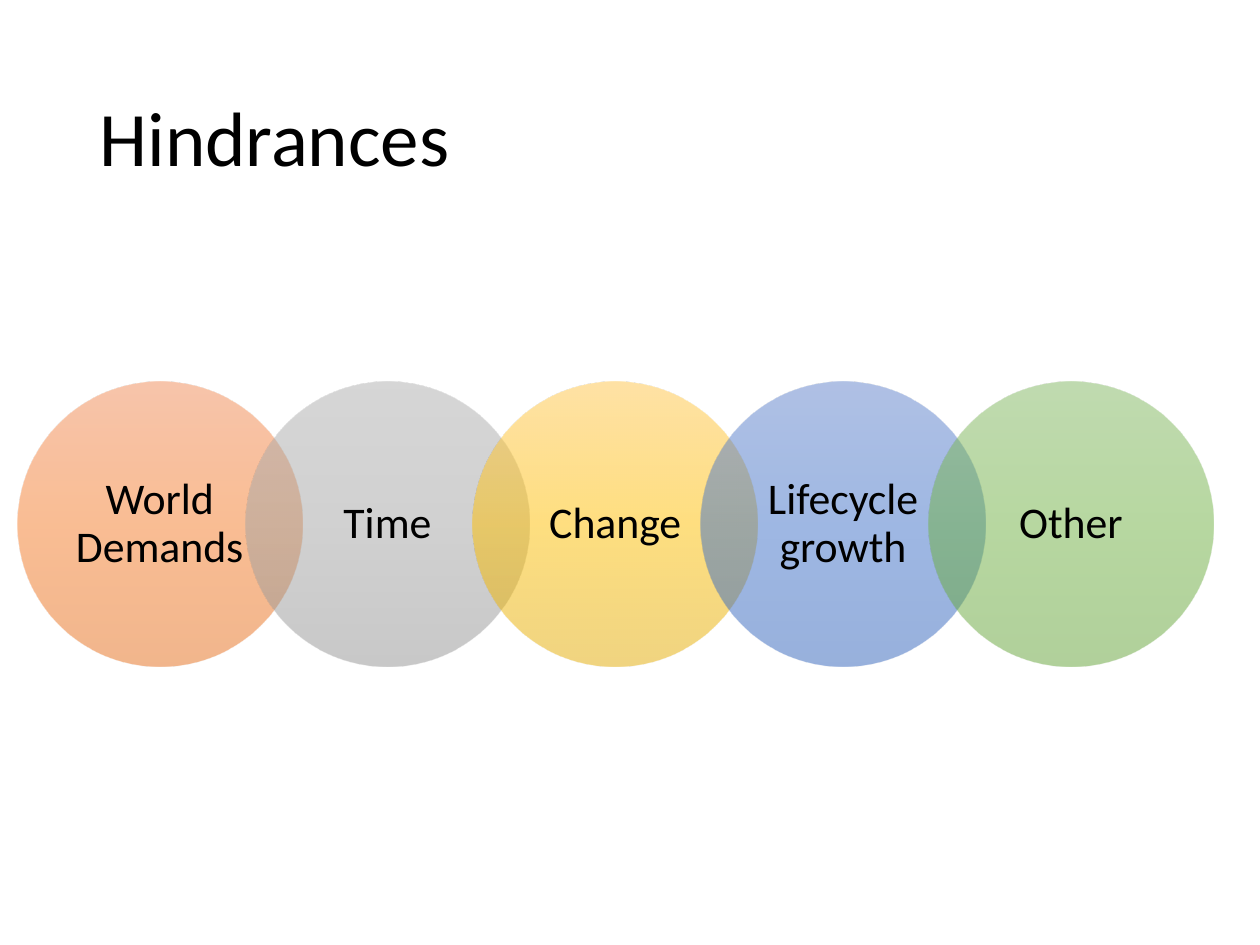
import dataclasses

import lxml.etree
import pptx
import pptx.dml.color
import pptx.enum.shapes
import pptx.enum.text
import pptx.oxml.ns
import pptx.util

Cm = pptx.util.Cm


@dataclasses.dataclass(frozen=True)
class Theme:
    font: str = "Calibri"
    text: str = "000000"
    title_size: int = 44
    label_size: int = 25
    line_spacing: float = 0.9
    opacity: int = 50
    orange: tuple = ("F18C57", "F67B28", "E56C19")
    grey: tuple = ("AFAFAF", "A5A5A5", "939393")
    gold: tuple = ("FFC64B", "FFC000", "E3AB00")
    blue: tuple = ("6183CB", "3E70CA", "3062BB")
    green: tuple = ("81B861", "6FB242", "62A336")


class SlideBuilder:
    """Draws styled elements on the current slide."""

    def __init__(self, page, theme):
        self.page = page
        self.theme = theme

    def set_text(self, shape, text, size, align):
        frame = shape.text_frame
        frame.text = text
        frame.word_wrap = True
        frame.auto_size = pptx.enum.text.MSO_AUTO_SIZE.NONE
        frame.vertical_anchor = pptx.enum.text.MSO_ANCHOR.MIDDLE
        for para in frame.paragraphs:
            para.alignment = align
            para.line_spacing = self.theme.line_spacing
            for span in para.runs:
                span.font.name = self.theme.font
                span.font.size = pptx.util.Pt(size)
                span.font.color.rgb = pptx.dml.color.RGBColor.from_string(self.theme.text)

    def title(self, text, left, top, width, height):
        title = self.page.shapes.title
        title.left, title.top = Cm(left), Cm(top)
        title.width, title.height = Cm(width), Cm(height)
        self.set_text(title, text, self.theme.title_size, pptx.enum.text.PP_ALIGN.LEFT)

    def shade(self, shape, colours):
        qn = pptx.oxml.ns.qn
        shape.fill.gradient()
        shape.fill.gradient_angle = 270
        stops = shape._element.spPr.find(qn("a:gradFill")).find(qn("a:gsLst"))
        for stop in list(stops):
            stops.remove(stop)
        for index, colour in enumerate(colours):
            stop = lxml.etree.SubElement(stops, qn("a:gs"), pos=str(index * 50000))
            tint = lxml.etree.SubElement(stop, qn("a:srgbClr"), val=colour)
            lxml.etree.SubElement(tint, qn("a:alpha"), val=str(self.theme.opacity * 1000))

    def circle(self, text, colours, left, top, diameter):
        circle = self.page.shapes.add_shape(
            pptx.enum.shapes.MSO_SHAPE.OVAL, Cm(left), Cm(top), Cm(diameter), Cm(diameter)
        )
        circle.shadow.inherit = False
        circle.line.fill.background()
        self.shade(circle, colours)
        frame = circle.text_frame
        frame.margin_left = frame.margin_right = Cm(0.3)
        frame.margin_top = frame.margin_bottom = Cm(0.08)
        self.set_text(circle, text, self.theme.label_size, pptx.enum.text.PP_ALIGN.CENTER)


def main():
    theme = Theme()
    deck = pptx.Presentation()
    deck.slide_width, deck.slide_height = Cm(25.4), Cm(19.05)
    builder = SlideBuilder(deck.slides.add_slide(deck.slide_layouts[5]), theme)
    builder.title("Hindrances", 1.75, 1.02, 21.89, 3.68)

    hindrances = [
        ("World Demands", theme.orange),
        ("Time", theme.grey),
        ("Change", theme.gold),
        ("Lifecycle growth", theme.blue),
        ("Other", theme.green),
    ]
    diameter = 5.74
    step = diameter * 0.8
    for index, (label, colours) in enumerate(hindrances):
        builder.circle(label, colours, 0.35 + index * step, 7.7, diameter)

    deck.save("out.pptx")


if __name__ == "__main__":
    main()
